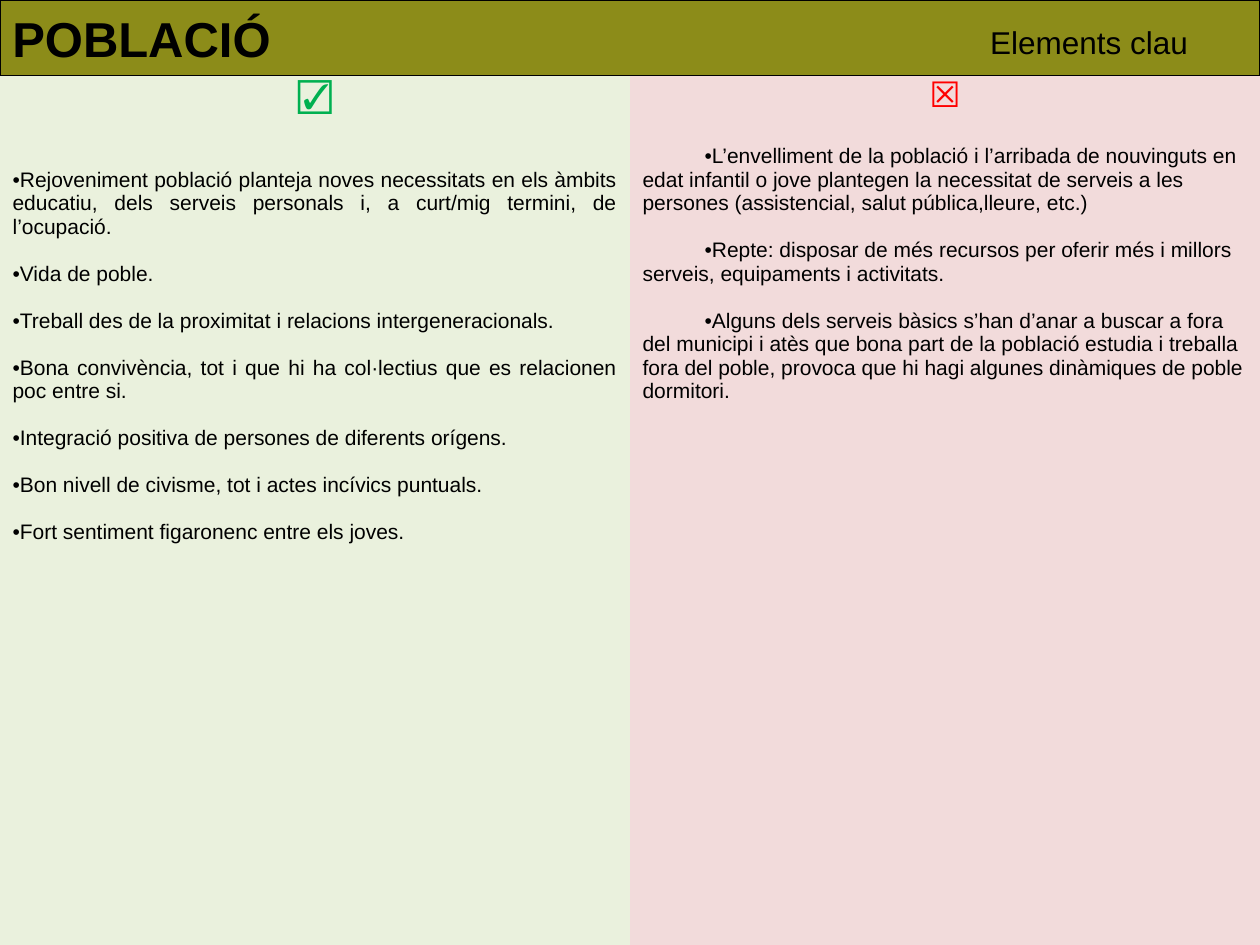
from dataclasses import dataclass

from lxml import etree
from pptx import Presentation
from pptx.dml.color import RGBColor
from pptx.enum.shapes import MSO_SHAPE
from pptx.enum.text import MSO_ANCHOR, PP_ALIGN
from pptx.oxml.ns import qn
from pptx.util import Cm, Pt

RECTANGLE = MSO_SHAPE.RECTANGLE
MIDDLE = MSO_ANCHOR.MIDDLE
LEFT, CENTER, JUSTIFY = PP_ALIGN.LEFT, PP_ALIGN.CENTER, PP_ALIGN.JUSTIFY
NO_STYLE_NO_GRID = "{2D5ABB26-0587-4C30-8999-92F81FD0307C}"

WIDTH, HEIGHT = 25.4, 19.05
BANNER_HEIGHT = 1.52
MARK_HEIGHT = 1.27

STRENGTHS = [
    "Rejoveniment població planteja noves necessitats en els àmbits educatiu, "
    "dels serveis personals i, a curt/mig termini, de l’ocupació.",
    "Vida de poble.",
    "Treball des de la proximitat i relacions intergeneracionals.",
    "Bona convivència, tot i que hi ha col·lectius que es relacionen poc entre si.",
    "Integració positiva de persones de diferents orígens.",
    "Bon nivell de civisme, tot i actes incívics puntuals.",
    "Fort sentiment figaronenc entre els joves.",
]
WEAKNESSES = [
    "L’envelliment de la població i l’arribada de nouvinguts en edat infantil o jove "
    "plantegen la necessitat de serveis a les persones (assistencial, salut "
    "pública,lleure, etc.)",
    "Repte: disposar de més recursos per oferir més i millors serveis, equipaments "
    "i activitats.",
    "Alguns dels serveis bàsics s’han d’anar a buscar a fora del municipi i atès que "
    "bona part de la població estudia i treballa fora del poble, provoca que hi hagi "
    "algunes dinàmiques de poble dormitori.",
]


@dataclass(frozen=True)
class Theme:
    text: str = "000000"
    banner: str = "808000"
    banner_opacity: int = 90
    good: str = "00B050"
    good_fill: str = "EAF1DD"
    bad: str = "FF0000"
    bad_fill: str = "F2DBDB"
    font: str = "Arial"
    mark_font: str = "Arial Narrow"
    title_size: int = 28
    subtitle_size: int = 18
    mark_size: int = 20
    body_size: int = 12
    body_gap: float = 13.4


def color(value):
    return RGBColor.from_string(value)


def write(frame, texts, *, size, font, fill, bold=False, align=LEFT,
          bullet=False, first_indent=0, gap=0):
    """Write one paragraph per text, with an equal gap between paragraphs."""
    for index, text in enumerate(texts):
        para = frame.paragraphs[0] if index == 0 else frame.add_paragraph()
        para.alignment = align
        if index:
            para.space_before = Pt(gap)
        if bullet:
            properties = para._p.get_or_add_pPr()
            properties.set("marL", "0")
            properties.set("indent", str(Cm(first_indent)))
            etree.SubElement(properties, qn("a:buFont"), typeface=font)
            etree.SubElement(properties, qn("a:buChar"), char="•")
        span = para.add_run()
        span.text = text
        span.font.size = Pt(size)
        span.font.name = font
        span.font.bold = bold
        span.font.color.rgb = color(fill)


class PageBuilder:
    def __init__(self, page, theme):
        self.page = page
        self.theme = theme

    def banner(self, text):
        theme = self.theme
        box = self.page.shapes.add_shape(
            RECTANGLE, 0, 0, Cm(WIDTH), Cm(BANNER_HEIGHT))
        box.shadow.inherit = False
        box.fill.solid()
        box.fill.fore_color.rgb = color(theme.banner)
        tint = box._element.spPr.find(qn("a:solidFill"))[0]
        etree.SubElement(tint, qn("a:alpha"), val=str(theme.banner_opacity * 1000))
        box.line.color.rgb = color(theme.text)
        box.line.width = Pt(0.75)
        box.text_frame.vertical_anchor = MIDDLE
        write(box.text_frame, [text], size=theme.title_size, font=theme.font,
              fill=theme.text, bold=True)

    def subtitle(self, text, left, top, width, height):
        box = self.page.shapes.add_textbox(Cm(left), Cm(top), Cm(width), Cm(height))
        box.text_frame.word_wrap = True
        write(box.text_frame, [text], size=self.theme.subtitle_size,
              font=self.theme.font, fill=self.theme.text)

    def comparison(self, columns):
        """Add a table with a mark above a bulleted list in each column."""
        theme = self.theme
        table_height = HEIGHT - BANNER_HEIGHT
        frame = self.page.shapes.add_table(
            2, len(columns), 0, Cm(BANNER_HEIGHT), Cm(WIDTH), Cm(table_height))
        table = frame.table
        table.first_row = table.horz_banding = False
        table._tbl.tblPr.find(qn("a:tableStyleId")).text = NO_STYLE_NO_GRID
        table.rows[0].height = Cm(MARK_HEIGHT)
        table.rows[1].height = Cm(table_height - MARK_HEIGHT)
        for index, column in enumerate(columns):
            table.columns[index].width = Cm(WIDTH / len(columns))
            mark, body = table.cell(0, index), table.cell(1, index)
            for cell in (mark, body):
                cell.fill.solid()
                cell.fill.fore_color.rgb = color(column["background"])
            write(mark.text_frame, [column["mark"]], size=theme.mark_size,
                  font=theme.mark_font, fill=column["mark_color"], align=CENTER)
            body.margin_top = Cm(column["top_margin"])
            write(body.text_frame, column["items"], size=theme.body_size,
                  font=theme.font, fill=theme.text, align=column["align"],
                  bullet=True, first_indent=column["first_indent"],
                  gap=theme.body_gap)


def main():
    deck = Presentation()
    deck.slide_width, deck.slide_height = Cm(WIDTH), Cm(HEIGHT)
    theme = Theme()
    builder = PageBuilder(deck.slides.add_slide(deck.slide_layouts[6]), theme)
    builder.comparison([
        dict(mark="☑", mark_color=theme.good, background=theme.good_fill,
             items=STRENGTHS, align=JUSTIFY, first_indent=0, top_margin=0.6),
        dict(mark="☒", mark_color=theme.bad, background=theme.bad_fill,
             items=WEAKNESSES, align=LEFT, first_indent=1.25, top_margin=0.13),
    ])
    builder.banner("POBLACIÓ")
    builder.subtitle("Elements clau", 19.71, 0.33, 5.69, 1.02)
    deck.save("out.pptx")


if __name__ == "__main__":
    main()
